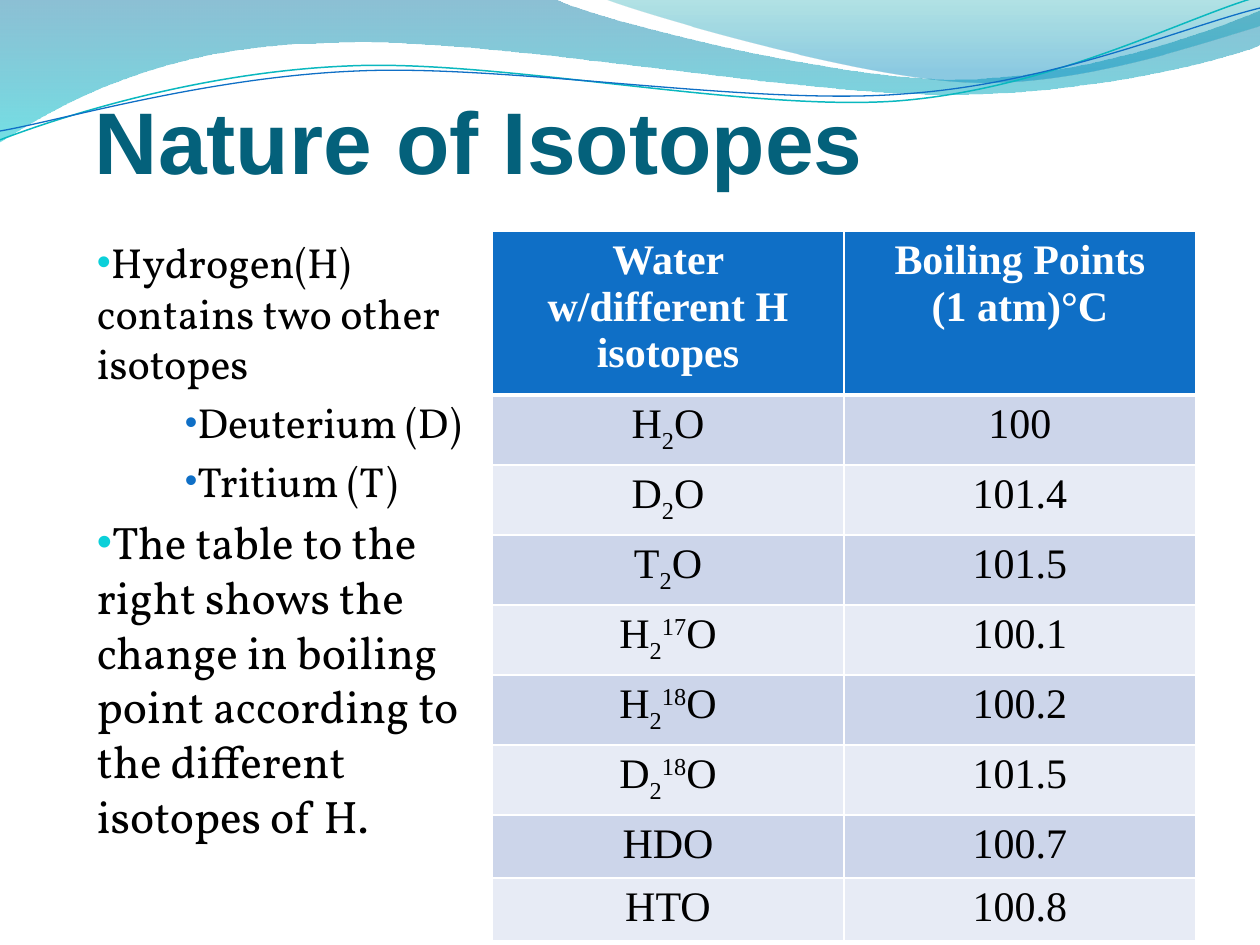
from math import cos, radians, sin

from lxml.etree import SubElement
from pptx import Presentation
from pptx.dml.color import RGBColor
from pptx.enum.text import MSO_ANCHOR, MSO_AUTO_SIZE, PP_ALIGN
from pptx.oxml.ns import qn
from pptx.util import Emu, Pt

PX = 914400 / 126
COLORS = {
    "title": "04617B", "text": "000000", "white": "FFFFFF",
    "header": "0F6FC6", "odd_row": "CCD5EA", "even_row": "E7EBF5",
    "bullet": "0BD0D9", "sub_bullet": "0F6FC6",
    "wave_top": "0074A1", "wave_bottom": "00C6CF",
    "crest_top": "00A1A9", "crest_bottom": "008BBF",
    "teal_line": "0AB8BF", "blue_line": "0F6FC6",
}
WAVE = [(0, 0), (554, -1),
        (600, 21, 837, 79, 955, 79), (1075, 79, 1207, 33, 1260, 11), (1261, 45),
        (1239, 55, 1096, 96, 940, 94), (784, 94, 481, 35, 324, 43),
        (163, 45, 58, 105, -1, 142)]
CREST = [(604, -1), (641, 14, 859, 78, 969, 82), (1079, 87, 1211, 40, 1260, 26), (1260, 0)]
TEAL_LINE = [(0, 140), (60, 117, 199, 72, 349, 66), (498, 59, 747, 112, 898, 101),
             (1050, 89, 1182, 19, 1257, -3)]
BLUE_LINE = [(0, 131), (59, 121, 207, 77, 357, 71), (508, 64, 752, 106, 903, 94),
             (1053, 84, 1186, 26, 1260, 8)]
BOILING_POINTS = [
    ("H _2 O", "100"), ("D _2 O", "101.4"), ("T _2 O", "101.5"),
    ("H _2 ^17 O", "100.1"), ("H _2 ^18 O", "100.2"), ("D _2 ^18 O", "101.5"),
    ("HDO", "100.7"), ("HTO", "100.8"),
]


def px(length):
    """Turn pixels into EMU."""
    return Emu(round(length * PX))


def rgb(name):
    """Look up a named colour."""
    return RGBColor.from_string(COLORS[name])


def add_text(paragraph, text, size=24, font="Times New Roman", color="text", bold=False, baseline=0):
    """Append one formatted run to a paragraph."""
    run = paragraph.add_run()
    run.text = text
    run.font.size = Pt(size)
    run.font.name = font
    run.font.bold = bold
    run.font.color.rgb = rgb(color)
    if baseline:
        run.font._element.set("baseline", str(baseline * 1000))


def add_text_box(slide, box, side_inset, bottom_inset):
    """Place a wrapping text box and return its frame."""
    frame = slide.shapes.add_textbox(*map(px, box)).text_frame
    frame.word_wrap = True
    frame.margin_left = frame.margin_right = px(side_inset)
    frame.margin_top, frame.margin_bottom = px(6), px(bottom_inset)
    return frame


def tilt_segment(segment, center, angle):
    """Turn the points of one segment about a center."""
    cx, cy = center
    turn_x, turn_y = cos(radians(angle)), sin(radians(angle))
    turned = []
    for x, y in zip(segment[::2], segment[1::2]):
        turned += [cx + (x - cx) * turn_x - (y - cy) * turn_y,
                   cy + (x - cx) * turn_y + (y - cy) * turn_x]
    return tuple(turned)


def add_outline(slide, origin, outline, close):
    """Build a freeform of lines and cubic curves relative to an origin."""
    start, *rest = [(px(origin[0] + x), px(origin[1] + y))
                    for segment in outline for x, y in zip(segment[::2], segment[1::2])]
    builder = slide.shapes.build_freeform(*start, scale=1.0)
    builder.add_line_segments(rest, close=close)
    shape = builder.convert_to_shape()
    shape.shadow.inherit = False
    steps = iter(list(shape._element.spPr.iter(qn("a:lnTo"))))
    for segment in outline[1:]:
        first = next(steps)
        if len(segment) == 6:
            first.tag = qn("a:cubicBezTo")
            for _ in range(2):
                step = next(steps)
                first.append(step[0])
                step.getparent().remove(step)
    return shape


def add_band(slide, origin, outline, stops):
    """Draw a filled band fading downwards between translucent stops."""
    band = add_outline(slide, origin, outline, True)
    band.line.fill.background()
    band.fill.gradient()
    band.fill.gradient_angle = 270
    for stop, (position, color, _) in zip(band.fill.gradient_stops, stops):
        stop.position = position
        stop.color.rgb = rgb(color)
    colors = list(band._element.spPr.iter(qn("a:srgbClr")))
    for element, (_, _, alpha) in zip(colors, stops):
        SubElement(element, qn("a:alpha")).set("val", str(alpha * 1000))


def add_wave_line(slide, origin, outline, center, color, width, tilt=2.7):
    """Draw a thin wave as a tilted open curve."""
    level = [tilt_segment(segment, center, tilt) for segment in outline]
    wave = add_outline(slide, origin, level, False)
    wave.rotation = 360 - tilt
    wave.fill.background()
    wave.line.color.rgb = rgb(color)
    wave.line.width = Pt(width)


def add_waves(slide, box):
    """Draw the decoration along the top edge."""
    origin = box[:2]
    add_band(slide, origin, WAVE, [(0, "wave_top", 45), (1, "wave_bottom", 55)])
    add_band(slide, origin, CREST, [(0, "crest_top", 30), (0.8, "crest_bottom", 45)])
    add_wave_line(slide, origin, TEAL_LINE, (629, 72), "teal_line", 0.85)
    add_wave_line(slide, origin, BLUE_LINE, (629, 74), "blue_line", 0.75)


def add_title(slide, box):
    """Write the heading at the foot of its box."""
    frame = add_text_box(slide, box, 0, 0)
    frame.vertical_anchor = MSO_ANCHOR.BOTTOM
    add_text(frame.paragraphs[0], "Nature of Isotopes", size=50, font="Arial", color="title", bold=True)


def set_bullet(paragraph, color, percent, indent):
    """Give a paragraph a coloured bullet and space above."""
    paragraph.space_before = Pt(4.8)
    properties = paragraph._p.get_or_add_pPr()
    properties.set("marL", str(px(indent)))
    properties.set("indent", "0")
    bullet_color = SubElement(properties, qn("a:buClr"))
    SubElement(bullet_color, qn("a:srgbClr")).set("val", COLORS[color])
    SubElement(properties, qn("a:buSzPct")).set("val", str(percent * 1000))
    SubElement(properties, qn("a:buFont")).set("typeface", "Arial")
    SubElement(properties, qn("a:buChar")).set("char", "•")


def add_explanation(slide, box):
    """Write the bulleted explanation."""
    points = [
        ("Hydrogen(H) contains two other isotopes", 0, 24),
        ("Deuterium (D)", 1, 24),
        ("Tritium (T)", 1, 24),
        ("The table to the right shows the change in boiling point "
         "according to the different isotopes of H.", 0, 26),
    ]
    frame = add_text_box(slide, box, 2, 6)
    frame.auto_size = MSO_AUTO_SIZE.TEXT_TO_FIT_SHAPE
    for index, (text, level, size) in enumerate(points):
        paragraph = frame.add_paragraph() if index else frame.paragraphs[0]
        paragraph.level = level
        set_bullet(paragraph, *(("sub_bullet", 85, 88) if level else ("bullet", 95, 0)))
        add_text(paragraph, text, size=size, font="Vollkorn")


def fill_cell(cell, lines, fill, **style):
    """Write centred lines whose pieces may be sub- or superscript."""
    cell.fill.solid()
    cell.fill.fore_color.rgb = rgb(fill)
    for index, pieces in enumerate(lines):
        paragraph = cell.text_frame.add_paragraph() if index else cell.text_frame.paragraphs[0]
        paragraph.alignment = PP_ALIGN.CENTER
        for piece in pieces:
            baseline = {"_": -25, "^": 30}.get(piece[0], 0)
            add_text(paragraph, piece.lstrip("_^"), baseline=baseline, **style)


def underline_header(cell):
    """Give a header cell its thick white bottom border."""
    border = SubElement(cell._tc.get_or_add_tcPr(), qn("a:lnB"), w=str(Pt(3)))
    line_fill = SubElement(border, qn("a:solidFill"))
    SubElement(line_fill, qn("a:srgbClr")).set("val", COLORS["white"])


def add_boiling_table(slide, box):
    """Build the table of boiling points."""
    frame = slide.shapes.add_table(len(BOILING_POINTS) + 1, 2, *map(px, box))
    table = frame.table
    for row in table.rows:
        row.height = px(52)
    frame.height = px(box[3])
    headings = [[["Water w/different H isotopes"]], [["Boiling Points"], ["(1 atm)°C"]]]
    for column, lines in enumerate(headings):
        heading = table.cell(0, column)
        heading.margin_left = heading.margin_right = px(20)
        underline_header(heading)
        fill_cell(heading, lines, "header", color="white", bold=True)
    for row, values in enumerate(BOILING_POINTS, 1):
        for column, value in enumerate(values):
            fill_cell(table.cell(row, column), [value.split()], "odd_row" if row % 2 else "even_row")


def main():
    """Build and save the slide."""
    deck = Presentation()
    deck.slide_width, deck.slide_height = px(1260), px(945)
    slide = deck.slides.add_slide(deck.slide_layouts[6])
    add_waves(slide, (0, 0, 1260, 142))
    add_title(slide, (95, 32, 809, 160))
    add_explanation(slide, (95, 231, 378, 630))
    add_boiling_table(slide, (492, 231, 704, 496))
    deck.save("out.pptx")


if __name__ == "__main__":
    main()
